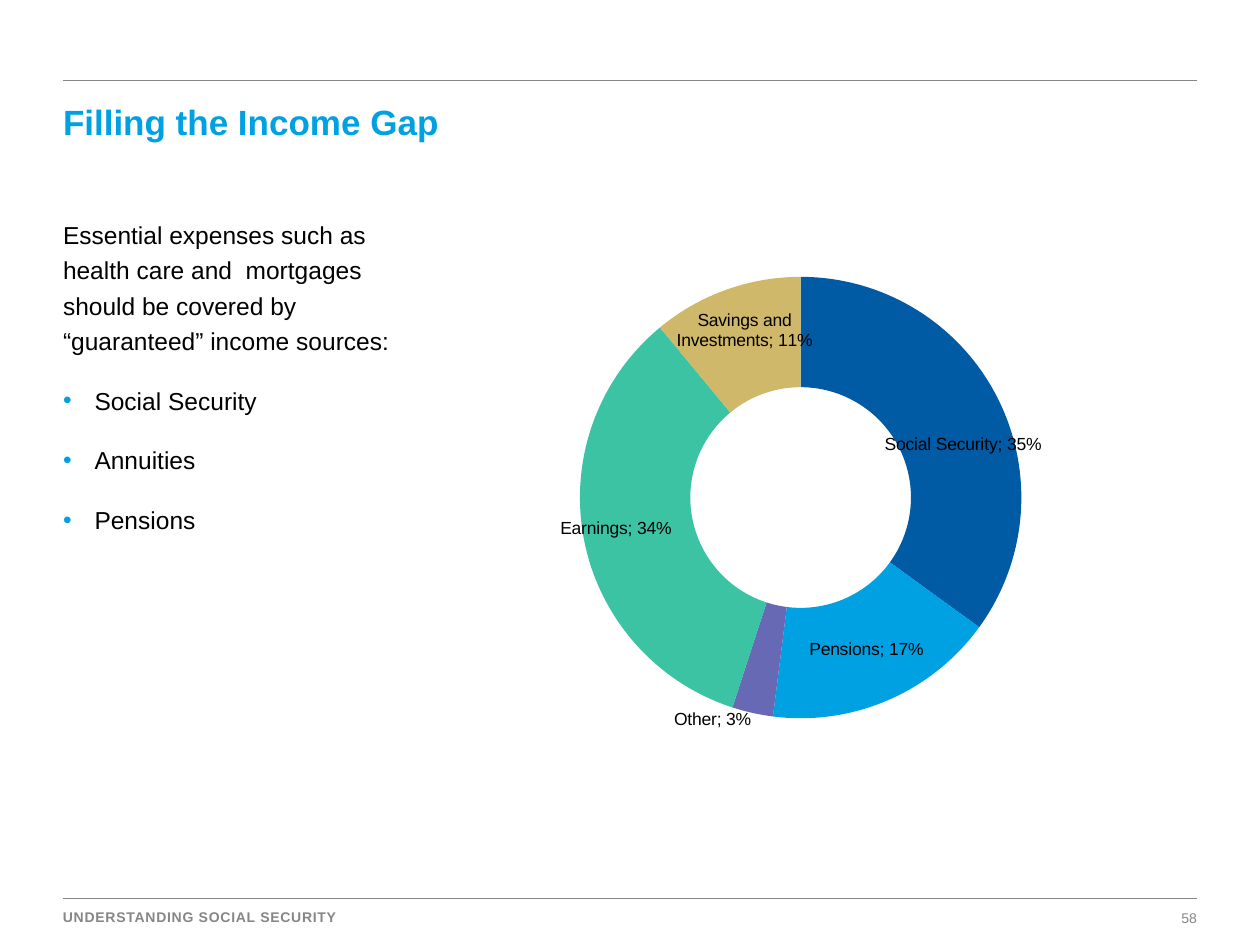
from lxml import etree
from pptx import Presentation
from pptx.chart.data import CategoryChartData
from pptx.dml.color import RGBColor
from pptx.enum.chart import XL_CHART_TYPE
from pptx.enum.shapes import MSO_CONNECTOR
from pptx.enum.text import MSO_ANCHOR, PP_ALIGN
from pptx.oxml import parse_xml
from pptx.oxml.ns import nsdecls, qn
from pptx.util import Inches, Pt

DOUGHNUT = XL_CHART_TYPE.DOUGHNUT
STRAIGHT = MSO_CONNECTOR.STRAIGHT
TOP = MSO_ANCHOR.TOP
LEFT, RIGHT = PP_ALIGN.LEFT, PP_ALIGN.RIGHT
FONT = "Arial"
COLORS = {
    "black": "000000",
    "gray": "868686",
    "navy": "005AA4",
    "blue": "00A1E2",
    "purple": "6769B5",
    "green": "3BC3A3",
    "gold": "D0B86A",
}
INCOME_SOURCES = [
    ("Social Security", 0.35, "navy", (0.02, 0.04)),
    ("Pensions", 0.17, "blue", None),
    ("Other", 0.03, "purple", (-0.07, 0.11)),
    ("Earnings", 0.34, "green", (-0.03, 0)),
    ("Savings and Investments", 0.11, "gold", (0, -0.02)),
]
GUARANTEED_SOURCES = ["Social Security", "Annuities", "Pensions"]


def color(name):
    return RGBColor.from_string(COLORS[name])


def format_font(font, size, color_name="black", bold=False):
    font.name = FONT
    font.size = Pt(size)
    font.bold = bold
    font.color.rgb = color(color_name)


def place(shape, left, top, width, height):
    shape.left, shape.top = Inches(left), Inches(top)
    shape.width, shape.height = Inches(width), Inches(height)


def prepare_frame(shape, wrap=True):
    frame = shape.text_frame
    frame.margin_left = frame.margin_right = 0
    frame.margin_top = frame.margin_bottom = 0
    frame.vertical_anchor = TOP
    frame.word_wrap = wrap
    return frame


def add_bullet(paragraph):
    properties = paragraph._p.get_or_add_pPr()
    properties.set("marL", str(Inches(0.25)))
    properties.set("indent", str(-Inches(0.25)))
    bullet_color = etree.SubElement(properties, qn("a:buClr"))
    etree.SubElement(bullet_color, qn("a:srgbClr"), val=COLORS["blue"])
    etree.SubElement(properties, qn("a:buFont"), typeface=FONT)
    etree.SubElement(properties, qn("a:buChar"), char="•")


def write_text(paragraph, text, size=14, color_name="black", bold=False,
               align=LEFT, spacing=None, before=0, bullet=False, tracking=None):
    if bullet:
        add_bullet(paragraph)
    paragraph.alignment = align
    paragraph.space_before = Pt(before)
    if spacing:
        paragraph.line_spacing = spacing
    run = paragraph.add_run()
    run.text = text
    format_font(run.font, size, color_name, bold)
    if tracking:
        run._r.get_or_add_rPr().set("spc", str(tracking))


def add_textbox(slide, left, top, width, height, wrap=True):
    box = slide.shapes.add_textbox(
        Inches(left), Inches(top), Inches(width), Inches(height))
    return prepare_frame(box, wrap)


def add_rule(slide, top):
    rule = slide.shapes.add_connector(
        STRAIGHT, Inches(0.5), Inches(top), Inches(9.5), Inches(top))
    rule.line.color.rgb = color("gray")
    rule.line.width = Pt(1)
    etree.SubElement(rule._element.spPr, qn("a:effectLst"))


def add_title(slide):
    title = slide.shapes.title
    place(title, 0.5, 0.8, 9, 0.34)
    frame = prepare_frame(title)
    write_text(frame.paragraphs[0], "Filling the Income Gap",
               size=20, color_name="blue", bold=True)


def add_body(slide):
    frame = add_textbox(slide, 0.5, 1.7, 2.91, 2.79)
    write_text(frame.paragraphs[0],
               "Essential expenses such as health care and  mortgages should "
               "be covered by “guaranteed” income sources:", spacing=1.2)
    for source in GUARANTEED_SOURCES:
        write_text(frame.add_paragraph(), source,
                   spacing=1.2, before=14, bullet=True)


def add_footer(slide):
    footer = add_textbox(slide, 0.5, 7.21, 3.1, 0.15, wrap=False)
    write_text(footer.paragraphs[0], "UNDERSTANDING SOCIAL SECURITY",
               size=8, color_name="gray", bold=True, tracking=40)
    number = add_textbox(slide, 9.3, 7.22, 0.2, 0.13)
    write_text(number.paragraphs[0], "58", size=8, color_name="gray", align=RIGHT)


def make_layout(**settings):
    entries = "".join(f'<c:{tag} val="{value}"/>' for tag, value in settings.items())
    return parse_xml(f'<c:layout {nsdecls("c")}><c:manualLayout>{entries}'
                     "</c:manualLayout></c:layout>")


def set_plot_area(chart):
    plot_area = chart._chartSpace.chart.plotArea
    for layout in plot_area.findall(qn("c:layout")):
        plot_area.remove(layout)
    plot_area.insert(0, make_layout(
        layoutTarget="inner", xMode="edge", yMode="edge",
        x=0.15, y=0.1, w=0.61, h=0.8))


def move_label(series, index, offset):
    format_font(series.points[index].data_label.font, 10)
    label = series.data_labels._element.xpath(f"c:dLbl[c:idx/@val='{index}']")[0]
    label.insert(1, make_layout(x=offset[0], y=offset[1]))
    label.insert(2, parse_xml(
        f'<c:numFmt {nsdecls("c")} formatCode="0%" sourceLinked="0"/>'))
    label.find(qn("c:showCatName")).set("val", "1")


def add_income_chart(slide):
    data = CategoryChartData(number_format="0%")
    data.categories = [name for name, *_ in INCOME_SOURCES]
    data.add_series("Series 1", [value for _, value, *_ in INCOME_SOURCES])
    chart = slide.shapes.add_chart(
        DOUGHNUT, Inches(3.67), Inches(1.76), Inches(5.9), Inches(4.38), data).chart
    chart.has_title = False
    chart.has_legend = False
    format_font(chart.font, 10)
    set_plot_area(chart)
    plot = chart.plots[0]
    plot.vary_by_categories = True
    series = plot.series[0]
    labels = series.data_labels
    labels.show_value = True
    labels.show_category_name = True
    labels.show_percentage = False
    labels.show_legend_key = False
    labels.number_format = "0%"
    labels.number_format_is_linked = False
    format_font(labels.font, 10)
    for index, (_, _, color_name, offset) in enumerate(INCOME_SOURCES):
        slice_format = series.points[index].format
        slice_format.fill.solid()
        slice_format.fill.fore_color.rgb = color(color_name)
        slice_format.line.fill.background()
        if offset:
            move_label(series, index, offset)


def main():
    presentation = Presentation()
    presentation.slide_width = Inches(10)
    presentation.slide_height = Inches(7.5)
    slide = presentation.slides.add_slide(presentation.slide_layouts[5])
    for top in (0.64, 7.13):
        add_rule(slide, top)
    add_footer(slide)
    add_title(slide)
    add_body(slide)
    add_income_chart(slide)
    presentation.save("out.pptx")


if __name__ == "__main__":
    main()
